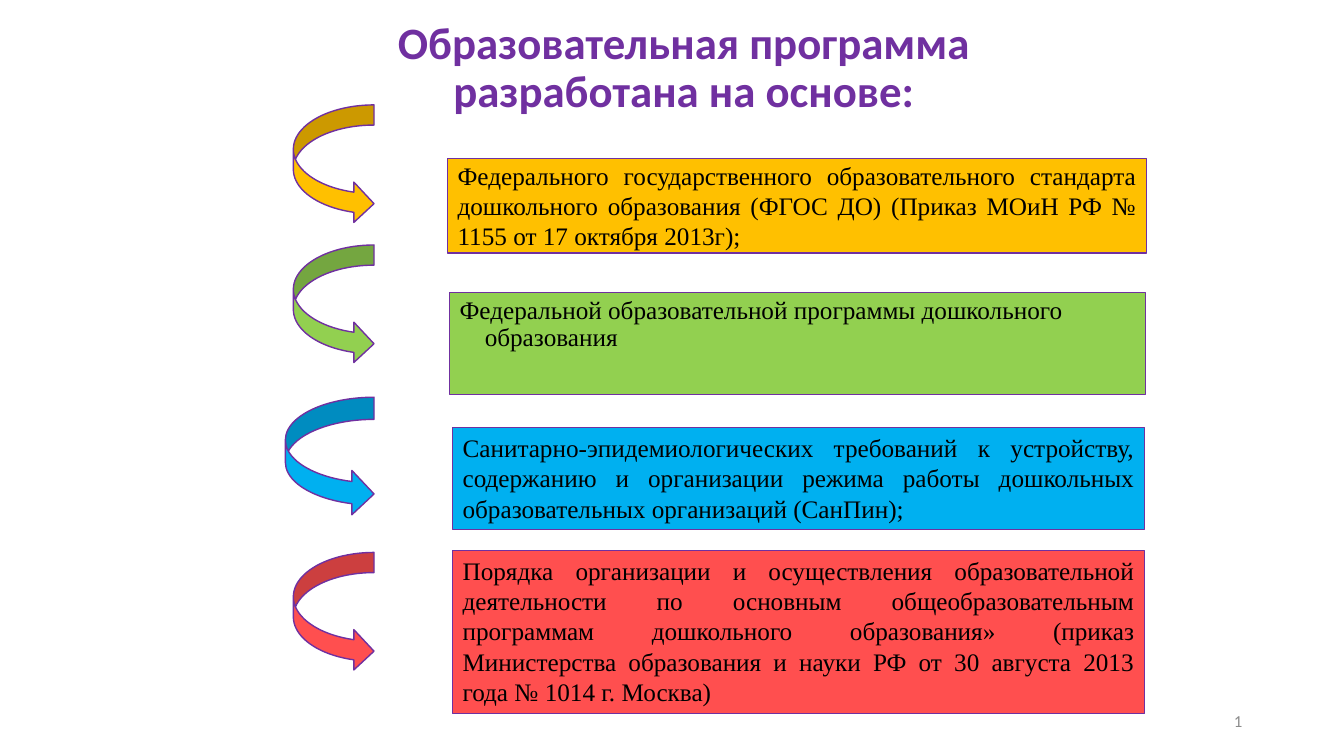
from pptx import Presentation
from pptx.dml.color import RGBColor
from pptx.enum.shapes import MSO_SHAPE
from pptx.enum.text import MSO_ANCHOR, PP_ALIGN
from pptx.oxml.ns import qn
from pptx.util import Pt

EMU_PER_PX = 9144  # 100 px to the inch

COLORS = {
    "violet": "7030A0",
    "black": "000000",
    "gray": "8C8C8C",
    "amber": "FFC000",
    "green": "92D050",
    "blue": "00B0F0",
    "red": "FF4F4F",
}


def px(length):
    return length * EMU_PER_PX


def color(name):
    return RGBColor.from_string(COLORS[name])


def write_text(shape, text, *, font="Times New Roman", size=18, ink="black", bold=False,
               align=PP_ALIGN.JUSTIFY, anchor=MSO_ANCHOR.TOP, spacing=None, hanging=0):
    frame = shape.text_frame
    frame.word_wrap = True
    frame.vertical_anchor = anchor
    paragraph = frame.paragraphs[0]
    paragraph.text = text
    paragraph.alignment = align
    if spacing:
        paragraph.line_spacing = spacing
    if hanging:
        properties = paragraph._p.get_or_add_pPr()
        properties.set("marL", str(px(hanging)))
        properties.set("indent", str(-px(hanging)))
    for run in paragraph.runs:
        run.font.name = font
        run.font.size = Pt(size)
        run.font.bold = bold
        run.font.color.rgb = color(ink)
    return paragraph


class SlideBuilder:
    def __init__(self, slide, outline="violet", heading_font="Calibri"):
        self.slide = slide
        self.outline = outline
        self.heading_font = heading_font

    def _shape(self, preset, box, fill, line_width):
        shape = self.slide.shapes.add_shape(preset, *map(px, box))
        shape.shadow.inherit = False
        shape.fill.solid()
        shape.fill.fore_color.rgb = color(fill)
        shape.line.color.rgb = color(self.outline)
        shape.line.width = Pt(line_width)
        return shape

    def label(self, box, text, **text_format):
        textbox = self.slide.shapes.add_textbox(*map(px, box))
        write_text(textbox, text, font=self.heading_font, anchor=MSO_ANCHOR.MIDDLE, **text_format)
        return textbox

    def card(self, box, text, fill, line_width=0.75, **text_format):
        write_text(self._shape(MSO_SHAPE.RECTANGLE, box, fill, line_width), text, **text_format)

    def arrow(self, box, fill):
        # Turned and mirrored so that it bulges left and points right
        arrow = self._shape(MSO_SHAPE.CURVED_DOWN_ARROW, box, fill, 1)
        arrow.rotation = 90
        arrow._element.spPr.find(qn("a:xfrm")).set("flipV", "1")

    def page_number(self, box, number):
        textbox = self.label(box, number, size=12, ink="gray", align=PP_ALIGN.RIGHT)
        field = textbox.text_frame.paragraphs[0].runs[0]._r
        field.tag = qn("a:fld")
        field.set("id", "{B6F15528-21DE-4FAA-801E-634DDDAF4B2B}")
        field.set("type", "slidenum")


# Each foundation: fill, arrow box, card box, text, card format
FOUNDATIONS = [
    ("amber", (272, 123, 118, 80), (444, 157, 693, 94),
     "Федерального государственного образовательного стандарта дошкольного образования "
     "(ФГОС ДО) (Приказ МОиН РФ № 1155 от 17 октября 2013г);",
     {"line_width": 1, "anchor": MSO_ANCHOR.MIDDLE}),
    ("green", (272, 262, 118, 80), (446, 290, 690, 101),
     "Федеральной образовательной программы дошкольного образования",
     {"align": PP_ALIGN.LEFT, "spacing": 0.9, "hanging": 25}),
    ("blue", (268, 409, 118, 88), (449, 424, 686, 101),
     "Санитарно-эпидемиологических требований к устройству, содержанию и организации "
     "режима работы дошкольных образовательных организаций (СанПин);", {}),
    ("red", (272, 567, 118, 80), (449, 546, 686, 162),
     "Порядка организации и осуществления образовательной деятельности по основным "
     "общеобразовательным программам дошкольного образования» (приказ Министерства "
     "образования и науки РФ от 30 августа 2013 года № 1014 г. Москва)", {}),
]


def main():
    presentation = Presentation()
    presentation.slide_width = px(1333)
    presentation.slide_height = px(750)
    builder = SlideBuilder(presentation.slides.add_slide(presentation.slide_layouts[6]))

    # Heading
    builder.label((222, 24, 913, 89), "Образовательная программа\vразработана на основе:",
                  size=32, ink="violet", bold=True, align=PP_ALIGN.CENTER, spacing=0.9)

    # Foundations of the programme
    for fill, arrow_box, card_box, text, card_format in FOUNDATIONS:
        builder.card(card_box, text, fill, **card_format)
        builder.arrow(arrow_box, fill)

    # Footer
    builder.page_number((942, 695, 300, 40), "3")

    presentation.save("out.pptx")


if __name__ == "__main__":
    main()
